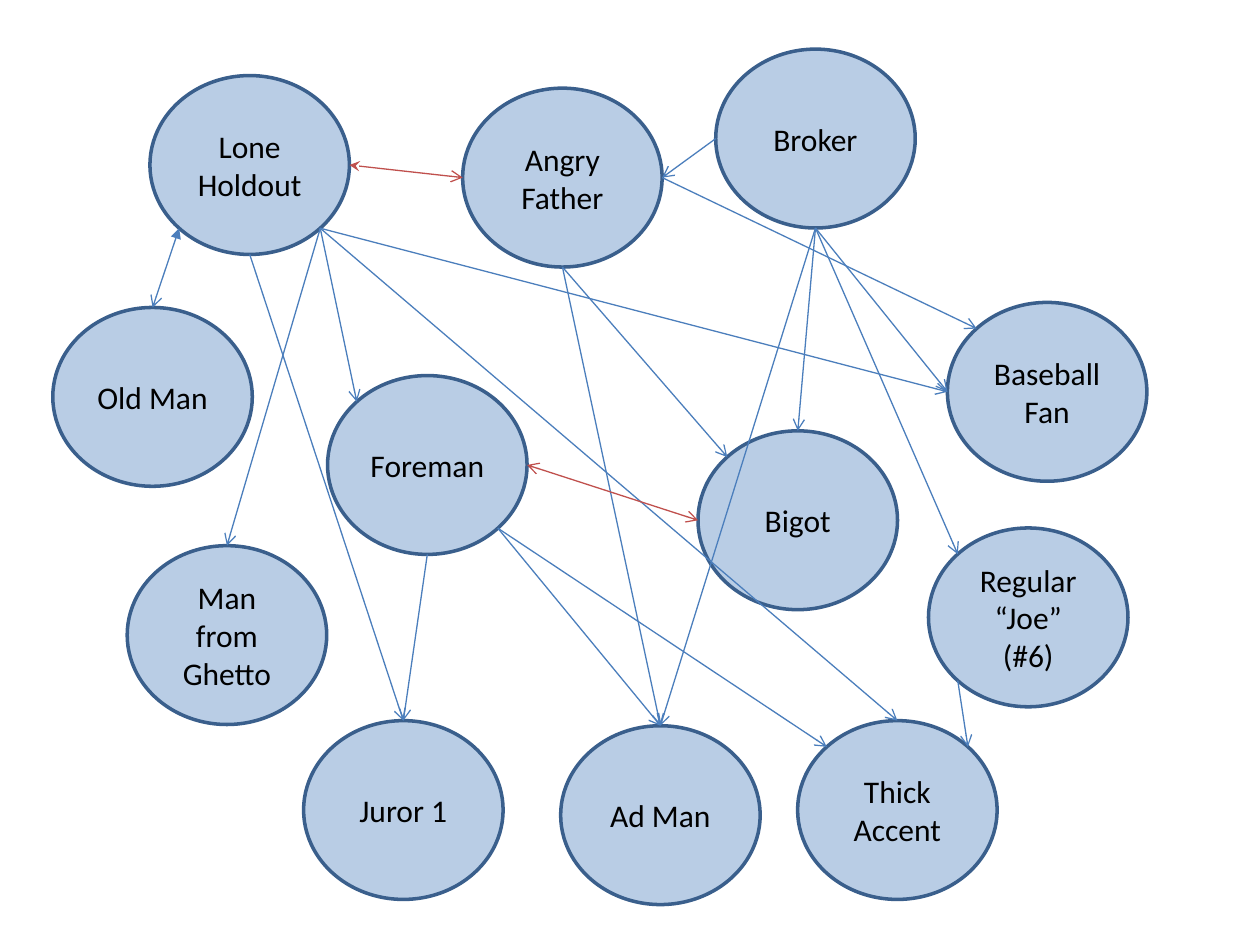
from math import sqrt

from lxml.etree import SubElement as Sub
from pptx import Presentation
from pptx.dml.color import RGBColor as Rgb
from pptx.enum.shapes import MSO_CONNECTOR as Link, MSO_SHAPE as Shape
from pptx.enum.text import MSO_ANCHOR as Anchor, PP_ALIGN as Align
from pptx.oxml.ns import qn
from pptx.util import Pt

COLORS = {"fill": "B9CDE5", "edge": "3A5F8C", "blue": "4B7EBC",
          "red": "C0504D", "text": "000000"}
WIDE, HIGH = 114, 102.2

# Jurors: key -> (text, left, top)
JURORS = {
    "foreman": ("Foreman", 187.2, 214.6),
    "one": ("Juror 1", 173.5, 411.8),
    "father": ("Angry\nFather", 264.4, 50.4),
    "broker": ("Broker", 409, 28.1),
    "ghetto": ("Man from Ghetto", 72.7, 311.8),
    "fan": ("Baseball Fan", 541.4, 172.8),
    "lone": ("Lone Holdout", 85.7, 43.2),
    "old": ("Old Man", 30.2, 175.7),
    "ad": ("Ad Man", 320.4, 414.7),
    "bigot": ("Bigot", 398.9, 246.2),
    "joe": ("Regular “Joe” (#6)", 530.6, 301.7),
    "accent": ("Thick Accent", 455.8, 411.8),
}

# Points on the rim, as steps from the centre in half widths and heights
DIAG = sqrt(0.5)
SITES = {
    "n": (0, -1), "s": (0, 1), "w": (-1, 0), "e": (1, 0),
    "nw": (-DIAG, -DIAG), "ne": (DIAG, -DIAG),
    "sw": (-DIAG, DIAG), "se": (DIAG, DIAG),
}

# One-way influence: (juror, site) -> targets
ARROWS = {
    ("foreman", "s"): [("one", "n")],
    ("joe", "sw"): [("accent", "ne")],
    ("foreman", "se"): [("ad", "n"), ("accent", "nw")],
    ("lone", "se"): [("ghetto", "n"), ("accent", "n"), ("fan", "w"),
                     ("foreman", "nw")],
    ("broker", "w"): [("father", "e")],
    ("broker", "s"): [("bigot", "n"), ("fan", "w"), ("joe", "nw"), ("ad", "n")],
    ("father", "s"): [("ad", "n"), ("bigot", "nw")],
    ("father", "e"): [("fan", "nw")],
    ("lone", "s"): [("one", "n")],
}

# Two-way links: start, end, colour, arrowhead at the start
PAIRS = [
    (("foreman", "e"), ("bigot", "w"), "red", "arrow"),
    (("lone", "sw"), ("old", "n"), "blue", "triangle"),
    (("lone", "e"), ("father", "w"), "red", "stealth"),
]


def color(name):
    return Rgb.from_string(COLORS[name])


def add_juror(slide, text, left, top):
    oval = slide.shapes.add_shape(Shape.OVAL, Pt(left), Pt(top), Pt(WIDE), Pt(HIGH))
    oval.shadow.inherit = False
    oval.fill.solid()
    oval.fill.fore_color.rgb = color("fill")
    oval.line.color.rgb = color("edge")
    oval.line.width = Pt(2)
    frame = oval.text_frame
    frame.word_wrap = True
    frame.vertical_anchor = Anchor.MIDDLE
    frame.text = text
    for para in frame.paragraphs:
        para.alignment = Align.CENTER
        para.font.name = "Calibri"
        para.font.size = Pt(18)
        para.font.color.rgb = color("text")


def rim(key, site):
    _, left, top = JURORS[key]
    across, down = SITES[site]
    return Pt(left + WIDE / 2 * (1 + across)), Pt(top + HIGH / 2 * (1 + down))


def add_link(slide, start, end, hue="blue", head=None):
    link = slide.shapes.add_connector(Link.STRAIGHT, *rim(*start), *rim(*end))
    link.line.color.rgb = color(hue)
    link.line.width = Pt(0.75)
    props = link._element.spPr
    line = props.find(qn("a:ln"))
    if head:
        Sub(line, qn("a:headEnd"), type=head)
    Sub(line, qn("a:tailEnd"), type="arrow")
    Sub(props, qn("a:effectLst"))


def main():
    deck = Presentation()
    deck.slide_width, deck.slide_height = Pt(720), Pt(540)
    slide = deck.slides.add_slide(deck.slide_layouts[6])

    # Jurors
    for juror in JURORS.values():
        add_juror(slide, *juror)

    # Links between them
    for start, ends in ARROWS.items():
        for end in ends:
            add_link(slide, start, end)
    for pair in PAIRS:
        add_link(slide, *pair)

    deck.save("out.pptx")


if __name__ == "__main__":
    main()
